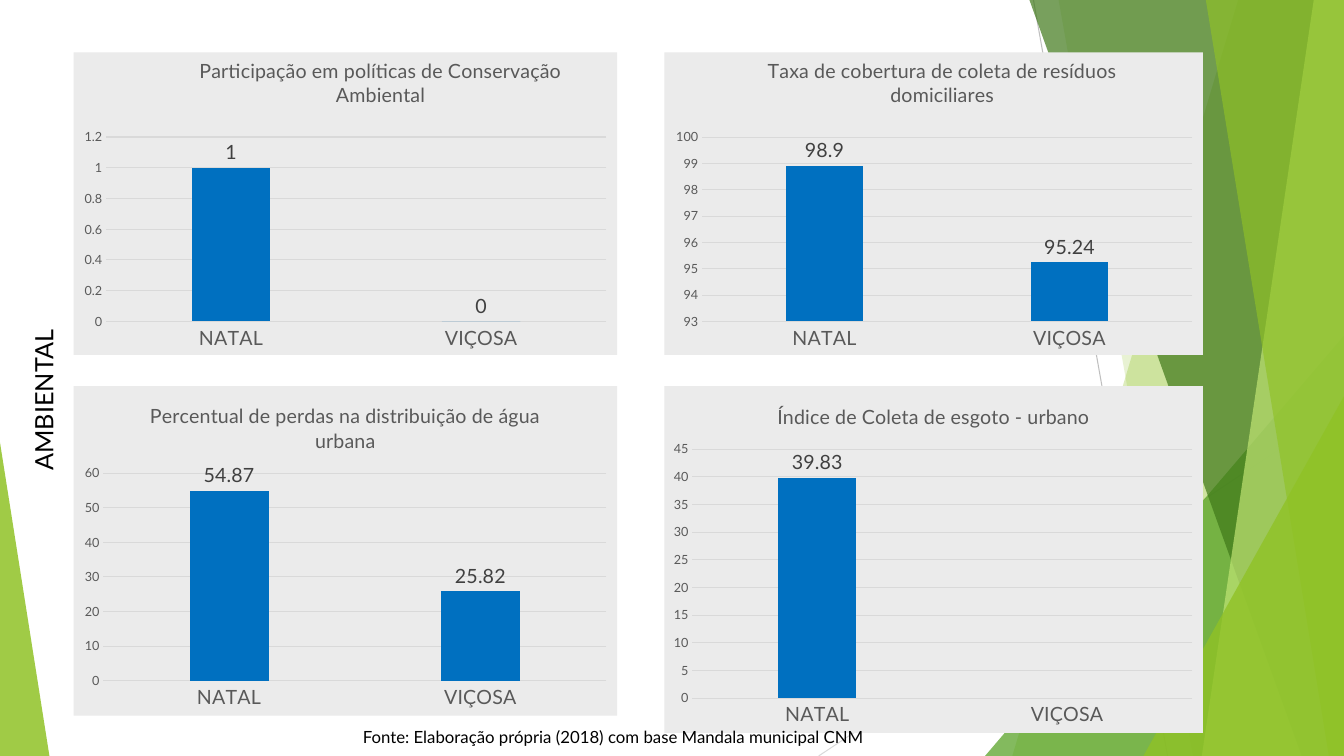
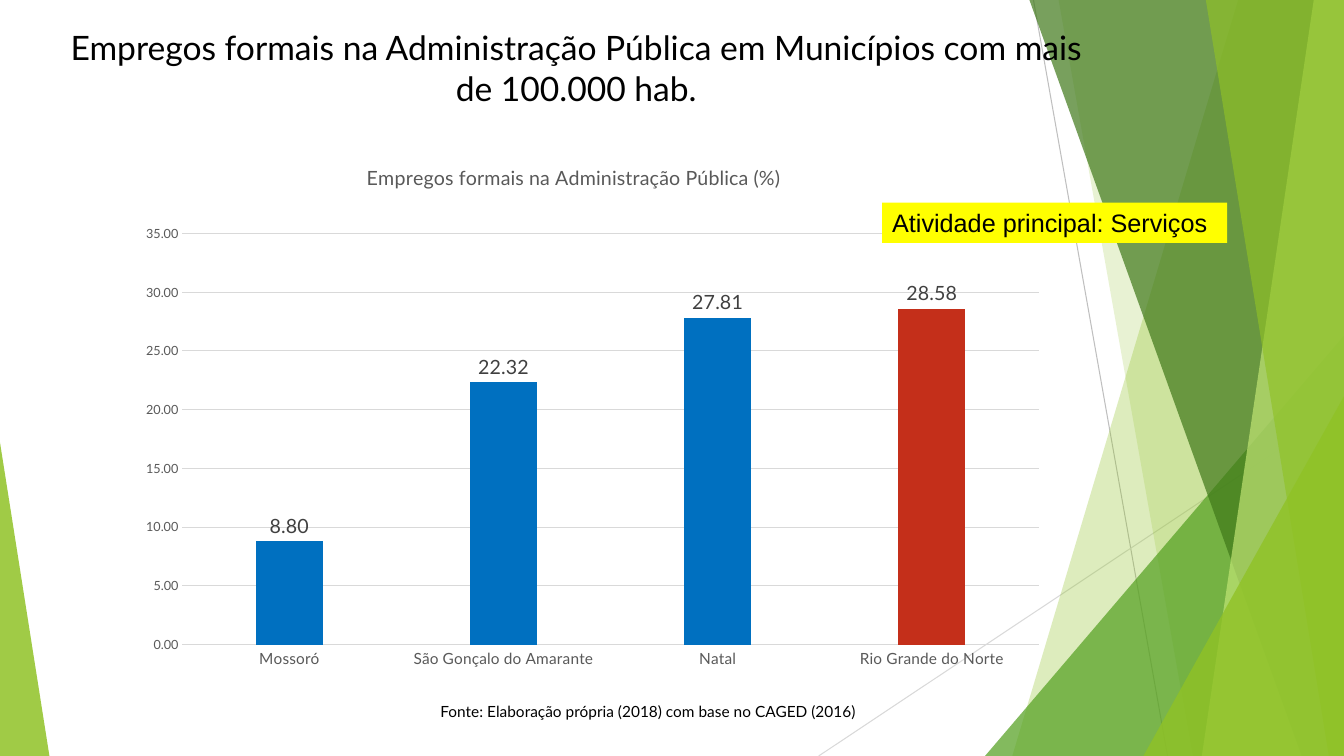
"""Build two slides of municipal indicators on a shared green faceted layout."""
from dataclasses import dataclass
from typing import Optional

from lxml.etree import SubElement
from pptx import Presentation
from pptx.chart.chart import Chart
from pptx.chart.data import CategoryChartData
from pptx.dml.color import RGBColor
from pptx.enum.chart import XL_CHART_TYPE, XL_LABEL_POSITION, XL_TICK_MARK
from pptx.enum.shapes import MSO_CONNECTOR, MSO_SHAPE
from pptx.enum.text import MSO_ANCHOR, MSO_AUTO_SIZE, PP_ALIGN
from pptx.oxml.ns import qn
from pptx.slide import Slide, SlideLayout
from pptx.util import Inches, Pt

COLORS = {
    "black": "000000", "title": "595959", "label": "404040", "grid": "D9D9D9",
    "line": "BFBFBF", "panel": "EBEBEB", "blue": "0070C0", "red": "C42F1A",
    "yellow": "FFFF00", "lime": "90C226", "pale": "C0E474",
    "green": "54A021", "dark": "3F7819",
}
FONT = "Lato"
WIDTH, HEIGHT = 13.33, 7.5
CITIES = ("NATAL", "VIÇOSA")


@dataclass(frozen=True)
class Box:
    left: float
    top: float
    width: float
    height: float

    def lengths(self) -> tuple:
        return tuple(Inches(value) for value in (self.left, self.top, self.width, self.height))


@dataclass(frozen=True)
class Ray:
    start: tuple
    end: tuple
    color: str


@dataclass(frozen=True)
class Band:
    top_left: float
    bottom_left: float
    color: str
    opacity: int


@dataclass(frozen=True)
class Wedge:
    box: Box
    apex: float
    color: str
    opacity: int


@dataclass(frozen=True)
class ColumnChart:
    box: Box
    title: str
    categories: tuple
    values: tuple
    plot: tuple
    scale: tuple
    title_corner: Optional[tuple] = None
    panel: Optional[str] = "panel"
    category_size: int = 14
    number_format: str = "General"
    highlighted: Optional[int] = None


RAYS = (
    Ray((10.25, 0), (11.58, HEIGHT), "line"),
    Ray((WIDTH, 4.03), (8.12, HEIGHT), "grid"),
)
FACETS = (
    Band(12.28, 10.04, "lime", 30),
    Band(10.5, 11.83, "lime", 20),
    Wedge(Box(9.77, 3.33, 3.56, 4.17), 1, "green", 72),
    Band(10.21, 12.91, "dark", 70),
    Band(13.03, 11.92, "pale", 70),
    Band(11.96, 13.18, "lime", 65),
    Wedge(Box(11.34, 3.93, 1.99, 3.57), 1, "lime", 80),
    Wedge(Box(0, 4.39, 0.49, 3.11), 0, "lime", 85),
)
ENVIRONMENT_CHARTS = (
    ColumnChart(Box(0.73, 0.52, 5.39, 3), "Participação em políticas de Conservação Ambiental",
                CITIES, (1, 0), (0.06, 0.28, 0.92, 0.61), (0, 1.2, 0.2), (0.225, 0)),
    ColumnChart(Box(0.73, 3.83, 5.39, 3.27), "Percentual de perdas na distribuição de água urbana",
                CITIES, (54.87, 25.82), (0.055, 0.264, 0.925, 0.63), (0, 60, 10)),
    ColumnChart(Box(6.59, 0.52, 5.34, 3), "Taxa de cobertura de coleta de resíduos domiciliares",
                CITIES, (98.9, 95.24), (0.07, 0.28, 0.91, 0.61), (93, 100, 1), (0.185, 0)),
    ColumnChart(Box(6.59, 3.83, 5.34, 3.44), "Índice de Coleta de esgoto - urbano",
                CITIES, (39.83, None), (0.052, 0.182, 0.928, 0.718), (0, 45, 5)),
)
JOBS_CHART = ColumnChart(
    Box(1.08, 1.42, 9.23, 5.31), "Empregos formais na Administração Pública (%)",
    ("Mossoró", "São Gonçalo do Amarante", "Natal", "Rio Grande do Norte"),
    (8.8, 22.32, 27.81, 28.58), (0.079, 0.169, 0.921, 0.768), (0, 35, 5),
    panel=None, category_size=11, number_format="0.00", highlighted=3)


def rgb(name: str) -> RGBColor:
    return RGBColor.from_string(COLORS[name])


def style_font(font, size: float, color: str, name: str = FONT) -> None:
    font.name = name
    font.size = Pt(size)
    font.bold = False
    font.color.rgb = rgb(color)


def paint(shape, color: str, opacity: int = 100) -> None:
    shape.shadow.inherit = False
    shape.fill.solid()
    shape.fill.fore_color.rgb = rgb(color)
    shape.line.fill.background()
    if opacity < 100:
        color_element = shape.element.spPr.find(qn("a:solidFill")).find(qn("a:srgbClr"))
        SubElement(color_element, qn("a:alpha")).set("val", str(opacity * 1000))


def add_ray(slide: Slide, ray: Ray) -> None:
    points = [Inches(value) for value in ray.start + ray.end]
    connector = slide.shapes.add_connector(MSO_CONNECTOR.STRAIGHT, *points)
    connector.line.color.rgb = rgb(ray.color)
    connector.line.width = Pt(0.75)
    SubElement(connector.element.spPr, qn("a:effectLst"))


def add_band(slide: Slide, band: Band) -> None:
    corners = ((WIDTH, 0), (WIDTH, HEIGHT), (band.bottom_left, HEIGHT))
    builder = slide.shapes.build_freeform(Inches(band.top_left), 0)
    builder.add_line_segments([(Inches(x), Inches(y)) for x, y in corners], close=True)
    paint(builder.convert_to_shape(), band.color, band.opacity)


def add_wedge(slide: Slide, wedge: Wedge) -> None:
    shape = slide.shapes.add_shape(MSO_SHAPE.ISOSCELES_TRIANGLE, *wedge.box.lengths())
    shape.adjustments[0] = wedge.apex
    paint(shape, wedge.color, wedge.opacity)


def move_backdrop_to_layout(slide: Slide, layout: SlideLayout) -> None:
    for placeholder in list(layout.placeholders)[1:]:
        layout.shapes.element.remove(placeholder.element)
    for ray in RAYS:
        add_ray(slide, ray)
    for facet in FACETS:
        if isinstance(facet, Band):
            add_band(slide, facet)
        else:
            add_wedge(slide, facet)
    for shape in list(slide.shapes):
        if not shape.is_placeholder:
            layout.shapes.element.append(shape.element)


def write(shape, text: str, size: float, name: str = FONT,
          alignment: PP_ALIGN = PP_ALIGN.LEFT) -> None:
    text_frame = shape.text_frame
    text_frame.text = text
    text_frame.word_wrap = True
    text_frame.auto_size = MSO_AUTO_SIZE.NONE
    text_frame.vertical_anchor = MSO_ANCHOR.TOP
    paragraph = text_frame.paragraphs[0]
    paragraph.alignment = alignment
    style_font(paragraph.runs[0].font, size, "black", name)


def set_title(slide: Slide, box: Box, text: str, size: float) -> None:
    title = slide.shapes.title
    title.left, title.top, title.width, title.height = box.lengths()
    write(title, text, size, alignment=PP_ALIGN.CENTER)


def add_side_label(slide: Slide, box: Box, text: str, size: float) -> None:
    label = slide.shapes.add_textbox(*box.lengths())
    write(label, text, size, alignment=PP_ALIGN.CENTER)
    label.element.txBody.find(qn("a:bodyPr")).set("vert", "vert270")


def add_source(slide: Slide, box: Box, text: str, size: float) -> None:
    write(slide.shapes.add_textbox(*box.lengths()), text, size)


def set_layout(parent, values: tuple, inner: bool = False) -> None:
    layout = parent.find(qn("c:layout"))
    if layout is None:
        layout = SubElement(parent, qn("c:layout"))
        parent.insert(0, layout)
    manual = SubElement(layout, qn("c:manualLayout"))
    settings = [("layoutTarget", "inner")] if inner else []
    settings += [("xMode", "edge"), ("yMode", "edge")]
    settings += list(zip("xywh", values))
    for tag, value in settings:
        SubElement(manual, qn(f"c:{tag}")).set("val", str(value))


def set_panel(chart: Chart, color: Optional[str]) -> None:
    chart_element = chart.element.find(qn("c:chart"))
    properties = SubElement(chart.element, qn("c:spPr"))
    chart_element.addnext(properties)
    if color:
        fill = SubElement(properties, qn("a:solidFill"))
        SubElement(fill, qn("a:srgbClr")).set("val", COLORS[color])
    else:
        SubElement(properties, qn("a:noFill"))
    SubElement(SubElement(properties, qn("a:ln")), qn("a:noFill"))


def style_axes(chart: Chart, content: ColumnChart) -> None:
    category_axis, value_axis = chart.category_axis, chart.value_axis
    for axis, size in ((category_axis, content.category_size), (value_axis, 9)):
        axis.major_tick_mark = axis.minor_tick_mark = XL_TICK_MARK.NONE
        style_font(axis.tick_labels.font, size, "title")
    value_axis.minimum_scale, value_axis.maximum_scale, value_axis.major_unit = content.scale
    value_axis.tick_labels.number_format = content.number_format
    value_axis.tick_labels.number_format_is_linked = False
    value_axis.format.line.fill.background()
    for line in (category_axis.format.line, value_axis.major_gridlines.format.line):
        line.color.rgb = rgb("grid")
        line.width = Pt(0.75)


def style_columns(chart: Chart, content: ColumnChart) -> None:
    plot = chart.plots[0]
    plot.gap_width, plot.overlap = 219, -27
    plot.vary_by_categories = False
    series = plot.series[0]
    series.invert_if_negative = False
    series.format.fill.solid()
    series.format.fill.fore_color.rgb = rgb("blue")
    if content.highlighted is not None:
        fill = series.points[content.highlighted].format.fill
        fill.solid()
        fill.fore_color.rgb = rgb("red")
    labels = series.data_labels
    labels.show_value = True
    labels.position = XL_LABEL_POSITION.OUTSIDE_END
    labels.number_format = content.number_format
    labels.number_format_is_linked = False
    style_font(labels.font, 14, "label")


def add_column_chart(slide: Slide, content: ColumnChart) -> None:
    data = CategoryChartData()
    data.categories = content.categories
    data.add_series(content.title, content.values)
    chart = slide.shapes.add_chart(
        XL_CHART_TYPE.COLUMN_CLUSTERED, *content.box.lengths(), data).chart
    style_font(chart.font, 10, "black")
    chart.has_legend = False
    title = chart.chart_title
    title.text_frame.text = content.title
    style_font(title.text_frame.paragraphs[0].runs[0].font, 14, "title")
    title.include_in_layout = False
    chart_element = chart.element.find(qn("c:chart"))
    if content.title_corner:
        set_layout(chart_element.find(qn("c:title")), content.title_corner)
    set_layout(chart_element.find(qn("c:plotArea")), content.plot, inner=True)
    set_panel(chart, content.panel)
    style_axes(chart, content)
    style_columns(chart, content)


def build_environment(slide: Slide) -> None:
    slide.shapes.element.remove(slide.shapes.title.element)
    for content in ENVIRONMENT_CHARTS:
        add_column_chart(slide, content)
    add_side_label(slide, Box(0.23, 2.39, 0.5, 3.16), "AMBIENTAL", 18)
    add_source(slide, Box(3.5, 7.16, 9.42, 0.3),
               "Fonte: Elaboração própria (2018) com base Mandala municipal CNM", 12)


def build_jobs(slide: Slide) -> None:
    add_column_chart(slide, JOBS_CHART)
    set_title(slide, Box(0.54, 0.22, 10.35, 0.91),
              "Empregos formais na Administração Pública em Municípios com mais de 100.000 hab.", 24)
    callout = slide.shapes.add_shape(MSO_SHAPE.RECTANGLE, *Box(8.75, 2.01, 3.42, 0.4).lengths())
    paint(callout, "yellow")
    write(callout, "Atividade principal: Serviços", 18, "Arial")
    add_source(slide, Box(4.27, 6.92, 6.2, 0.29),
               "Fonte: Elaboração própria (2018) com base no CAGED (2016)", 11)


def main() -> None:
    presentation = Presentation()
    presentation.slide_width, presentation.slide_height = Inches(WIDTH), Inches(HEIGHT)
    layout = presentation.slide_layouts.get_by_name("Title Only")
    environment, jobs = [presentation.slides.add_slide(layout) for _ in range(2)]
    move_backdrop_to_layout(environment, layout)
    build_environment(environment)
    build_jobs(jobs)
    presentation.save("out.pptx")


if __name__ == "__main__":
    main()
